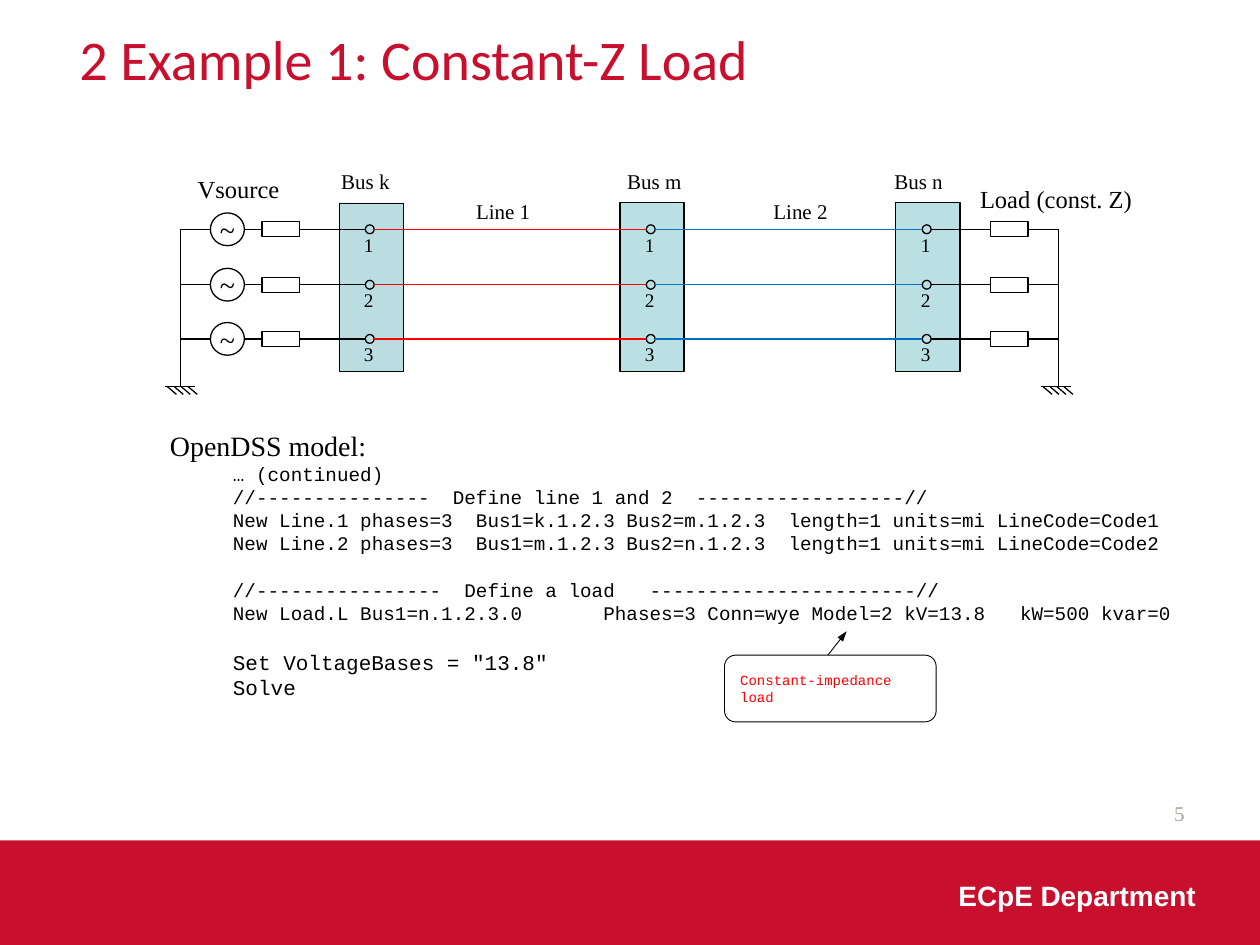
from lxml import etree
from pptx import Presentation
from pptx.dml.color import RGBColor
from pptx.enum.shapes import MSO_CONNECTOR, MSO_SHAPE
from pptx.enum.text import MSO_ANCHOR, MSO_AUTO_SIZE, PP_ALIGN
from pptx.oxml.ns import qn
from pptx.util import Inches, Pt

RECTANGLE, ROUNDED, OVAL = MSO_SHAPE.RECTANGLE, MSO_SHAPE.ROUNDED_RECTANGLE, MSO_SHAPE.OVAL
STRAIGHT = MSO_CONNECTOR.STRAIGHT
MIDDLE = MSO_ANCHOR.MIDDLE
GROW = MSO_AUTO_SIZE.SHAPE_TO_FIT_TEXT
LEFT, CENTER, RIGHT, JUSTIFY = PP_ALIGN.LEFT, PP_ALIGN.CENTER, PP_ALIGN.RIGHT, PP_ALIGN.JUSTIFY

SERIF, MONO = "Times New Roman", "Courier New"
BLACK, WHITE, RED, BLUE = "000000", "FFFFFF", "FF0000", "0070C0"
CARDINAL, GREY, BUS_FILL = "C8102E", "ACA39A", "BBE0E3"

PHASE_OFFSETS = (0.21, 0.65, 1.08)
NODE_OFFSET, NODE_SIZE = 0.21, 0.07
BUS_WIDTH, BUS_HEIGHT = 0.51, 1.34
RESISTOR_WIDTH, RESISTOR_HEIGHT = 0.3, 0.12
SOURCE_WIDTH, SOURCE_HEIGHT = 0.27, 0.26
GROUND_DROP = 1.46

# Text, size, space before
CODE = (
    ("… (continued)", 11, 0),
    ("//---------------  Define line 1 and 2  ------------------//", 11, 0),
    ("New Line.1 phases=3  Bus1=k.1.2.3 Bus2=m.1.2.3  length=1 units=mi LineCode=Code1", 11, 0),
    ("New Line.2 phases=3  Bus1=m.1.2.3 Bus2=n.1.2.3  length=1 units=mi LineCode=Code2", 11, 0),
    ("//----------------  Define a load   -----------------------//", 11, 13.2),
    ("New Load.L Bus1=n.1.2.3.0       Phases=3 Conn=wye Model=2 kV=13.8   kW=500 kvar=0", 11, 0),
    ('Set VoltageBases = "13.8"', 12, 14.3),
    ("Solve", 12, 0),
)


def color(hex_string):
    return RGBColor.from_string(hex_string)


def format_paragraph(paragraph, size, font, text_color, align=LEFT, bold=False):
    paragraph.alignment = align
    for run in paragraph.runs:
        run.font.size = Pt(size)
        run.font.name = font
        run.font.bold = bold
        run.font.color.rgb = color(text_color)


def add_box(slide, kind, left, top, width, height, fill=None, line=BLACK, weight=0.75):
    shape = slide.shapes.add_shape(kind, Inches(left), Inches(top), Inches(width), Inches(height))
    shape.shadow.inherit = False
    if fill:
        shape.fill.solid()
        shape.fill.fore_color.rgb = color(fill)
    else:
        shape.fill.background()
    if line:
        shape.line.color.rgb = color(line)
        shape.line.width = Pt(weight)
    else:
        shape.line.fill.background()
    return shape


def add_line(slide, x1, y1, x2, y2, line=BLACK, weight=0.75, arrow=False):
    connector = slide.shapes.add_connector(STRAIGHT, Inches(x1), Inches(y1), Inches(x2), Inches(y2))
    connector.line.color.rgb = color(line)
    connector.line.width = Pt(weight)
    if arrow:
        etree.SubElement(connector.line._get_or_add_ln(), qn("a:tailEnd"), type="triangle", w="sm")
    etree.SubElement(connector._element.spPr, qn("a:effectLst"))


def add_text(slide, text, left, top, width, height, size, font=SERIF, text_color=BLACK,
             align=LEFT, bold=False, wrap=False):
    box = slide.shapes.add_textbox(Inches(left), Inches(top), Inches(width), Inches(height))
    frame = box.text_frame
    frame.word_wrap = wrap
    if not wrap:
        frame.auto_size = GROW
    frame.text = text
    format_paragraph(frame.paragraphs[0], size, font, text_color, align, bold)
    return frame


def add_title(slide, text, left, top, width, height):
    title = slide.shapes.title
    title.left, title.top, title.width, title.height = map(Inches, (left, top, width, height))
    title.text_frame.text = text
    title.text_frame.vertical_anchor = MIDDLE
    format_paragraph(title.text_frame.paragraphs[0], 32, "Calibri", CARDINAL)


def add_footer(slide, left, top, width, height):
    add_box(slide, RECTANGLE, left, top, width, height, CARDINAL, None)
    add_text(slide, "ECpE Department", left + 6.92, top + 0.25, 2.67, 0.42, 16, "Arial",
             WHITE, RIGHT, bold=True, wrap=True)
    number = add_text(slide, "5", left + 7.17, top - 0.42, 2.33, 0.4, 12, SERIF, GREY, RIGHT, wrap=True)
    number.vertical_anchor = MIDDLE


def add_bus(slide, name, left, top, name_shift, fill=BUS_FILL, weight=0.75):
    add_box(slide, RECTANGLE, left, top, BUS_WIDTH, BUS_HEIGHT, fill, weight=weight)
    add_text(slide, name, left + name_shift, top - 0.32, 0.66, 0.3, 12)
    for number, offset in enumerate(PHASE_OFFSETS, 1):
        y = top + offset
        add_box(slide, OVAL, left + NODE_OFFSET, y - NODE_SIZE / 2, NODE_SIZE, NODE_SIZE)
        add_text(slide, str(number), left + 0.1, y - 0.02, 0.28, 0.29, 11)


def add_line_section(slide, name, left, right, top, line, name_left):
    """Join the nodes of two neighbouring buses, one wire for each phase."""
    for offset in PHASE_OFFSETS:
        add_line(slide, left, top + offset, right, top + offset, line)
    add_text(slide, name, name_left, top - 0.08, 0.66, 0.3, 12)


def add_ground(slide, wire, bar_left, top):
    """Draw the common wire of the phases down to an earth symbol."""
    bottom = top + GROUND_DROP
    add_line(slide, wire, top + PHASE_OFFSETS[0], wire, bottom)
    add_line(slide, bar_left, bottom, bar_left + 0.24, bottom)
    for index in range(4):
        x = bar_left + 0.02 + index * 0.055
        add_line(slide, x, bottom, x + 0.07, bottom + 0.06)


def add_resistor(slide, left, y):
    add_box(slide, RECTANGLE, left, y - RESISTOR_HEIGHT / 2, RESISTOR_WIDTH, RESISTOR_HEIGHT)


def add_source(slide, left, top, node):
    add_ground(slide, left, left - 0.12, top)
    circle_left, resistor_left = left + 0.24, left + 0.65
    for offset in PHASE_OFFSETS:
        y = top + offset
        add_line(slide, left, y, circle_left, y)
        circle = add_box(slide, OVAL, circle_left, y - SOURCE_HEIGHT / 2, SOURCE_WIDTH, SOURCE_HEIGHT)
        frame = circle.text_frame
        frame.margin_left = frame.margin_right = frame.margin_top = frame.margin_bottom = 0
        frame.word_wrap = False
        frame.vertical_anchor = MIDDLE
        frame.text = "~"
        format_paragraph(frame.paragraphs[0], 16, SERIF, BLACK, CENTER)
        add_line(slide, circle_left + SOURCE_WIDTH, y, resistor_left, y)
        add_resistor(slide, resistor_left, y)
        add_line(slide, resistor_left + RESISTOR_WIDTH, y, node, y)
    add_text(slide, "Vsource", left + 0.04, top - 0.28, 0.88, 0.34, 14)


def add_load(slide, node, top, resistor_left, wire):
    for offset in PHASE_OFFSETS:
        y = top + offset
        add_line(slide, node, y, resistor_left, y)
        add_resistor(slide, resistor_left, y)
        add_line(slide, resistor_left + RESISTOR_WIDTH, y, wire, y)
    add_ground(slide, wire, wire - 0.14, top)
    add_text(slide, "Load (const. Z)", resistor_left - 0.18, top - 0.2, 1.44, 0.34, 14, wrap=True)


def add_circuit(slide, left, top):
    bus_k, bus_m, bus_n = left + 1.26, left + 3.49, left + 5.68
    node_end = NODE_OFFSET + NODE_SIZE
    add_bus(slide, "Bus k", bus_k, top, -0.08, "BADDE1", 0.25)
    add_bus(slide, "Bus m", bus_m, top, -0.04)
    add_bus(slide, "Bus n", bus_n, top, -0.11)
    add_source(slide, left, top, bus_k + NODE_OFFSET)
    add_line_section(slide, "Line 1", bus_k + node_end, bus_m + NODE_OFFSET, top, RED, left + 2.25)
    add_line_section(slide, "Line 2", bus_m + node_end, bus_n + NODE_OFFSET, top, BLUE, left + 4.61)
    add_load(slide, bus_n + node_end, top, left + 6.43, left + 6.97)


def add_model(slide, left, top, width, height):
    frame = add_text(slide, "OpenDSS model:", left, top, width, height, 16, wrap=True)
    frame.paragraphs[0].line_spacing = 1.2
    for text, size, space in CODE:
        paragraph = frame.add_paragraph()
        paragraph.text = text
        paragraph.level = 1
        paragraph._p.get_or_add_pPr().set("marL", str(Inches(0.5)))
        paragraph.space_before = Pt(space)
        format_paragraph(paragraph, size, MONO, BLACK, JUSTIFY)


def add_callout(slide, left, top, width, height):
    add_line(slide, left + 0.82, top, left + 0.97, top - 0.19, weight=0.5, arrow=True)
    box = add_box(slide, ROUNDED, left, top, width, height, weight=0.5)
    box.text_frame.text = "Constant-impedance load"
    box.text_frame.word_wrap = True
    box.text_frame.vertical_anchor = MIDDLE
    format_paragraph(box.text_frame.paragraphs[0], 8, MONO, RED)


def main():
    presentation = Presentation()
    presentation.slide_width, presentation.slide_height = Inches(10), Inches(7.5)
    slide = presentation.slides.add_slide(presentation.slide_layouts[5])
    add_footer(slide, 0, 6.67, 10, 0.83)
    add_title(slide, "2 Example 1: Constant-Z Load", 0.53, 0.08, 9.38, 0.77)
    add_circuit(slide, 1.43, 1.61)
    add_model(slide, 1.25, 3.3, 8.39, 2.33)
    add_callout(slide, 5.75, 5.2, 1.68, 0.53)
    presentation.save("out.pptx")


if __name__ == "__main__":
    main()
